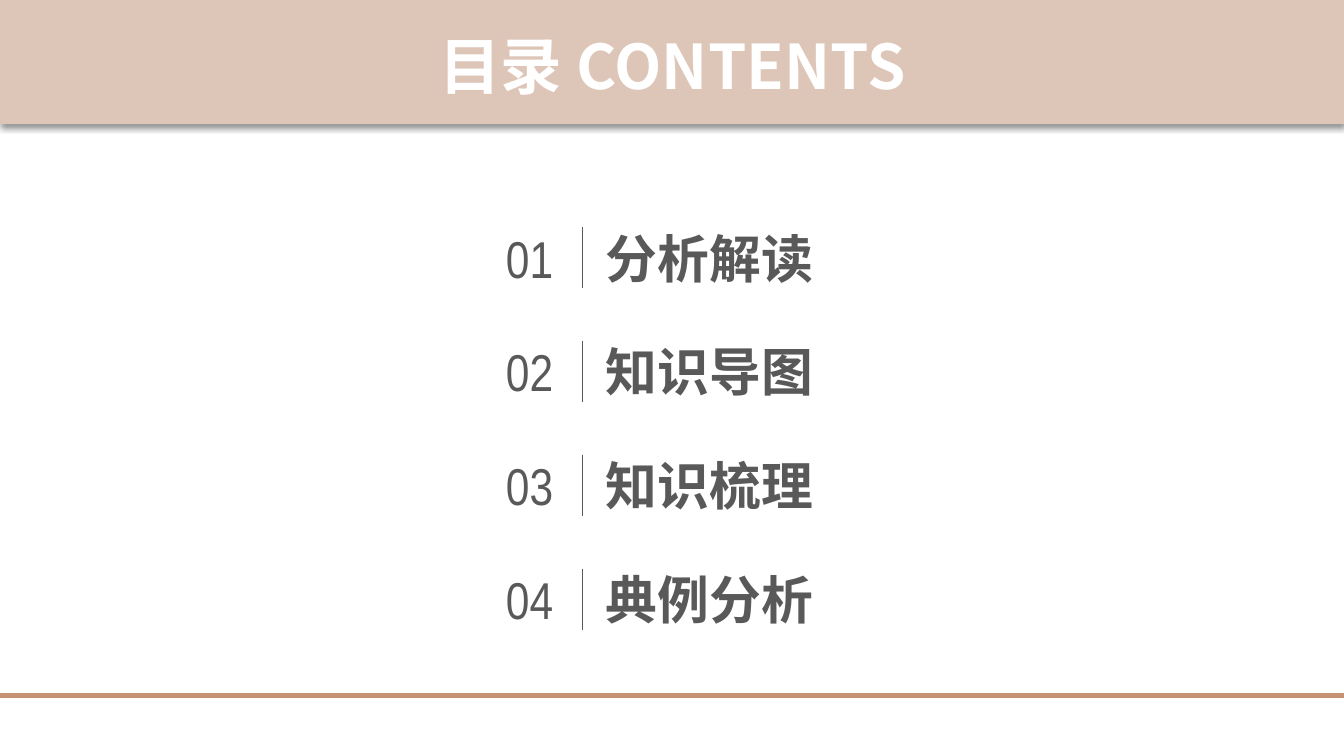
import pptx
import pptx.dml.color
import pptx.enum.shapes
import pptx.enum.text
import pptx.oxml
import pptx.oxml.ns
import pptx.util
from lxml import etree

Pt = pptx.util.Pt
ALIGN = pptx.enum.text.PP_ALIGN
qn = pptx.oxml.ns.qn

COLORS = {"ink": "595959", "banner": "DDC5B7", "white": "FFFFFF", "rule": "C69274"}
LATIN = "Arial Narrow"
CJK = "Noto Sans CJK SC"
WIDTH, HEIGHT = 960, 540
TOPICS = ["分析解读", "知识导图", "知识梳理", "典例分析"]
FIRST_TOP, ROW_PITCH = 156.6, 81.4

SHADOW = (
    f'<a:effectLst {pptx.oxml.ns.nsdecls("a")}>'
    '<a:outerShdw blurRad="50800" dist="38100" dir="5400000" algn="t" rotWithShape="0">'
    '<a:srgbClr val="000000"><a:alpha val="40000"/></a:srgbClr>'
    "</a:outerShdw></a:effectLst>"
)


class Deck:
    def __init__(self):
        self.prs = pptx.Presentation()
        self.prs.slide_width, self.prs.slide_height = Pt(WIDTH), Pt(HEIGHT)
        self.s = self.prs.slides.add_slide(self.prs.slide_layouts[6])

    def color(self, name):
        return pptx.dml.color.RGBColor.from_string(COLORS[name])

    def text(self, box, words, size, font, color, bold=False, align=ALIGN.LEFT,
             insets=(9.4, 5), wrap=True):
        sp = self.s.shapes.add_textbox(*map(Pt, box))
        tf = sp.text_frame
        tf.word_wrap = wrap
        tf.auto_size = pptx.enum.text.MSO_AUTO_SIZE.SHAPE_TO_FIT_TEXT
        tf.margin_left = tf.margin_right = Pt(insets[0])
        tf.margin_top = tf.margin_bottom = Pt(insets[1])
        p = tf.paragraphs[0]
        p.alignment = align
        p.font.size, p.font.bold, p.font.name = Pt(size), bold, font
        p.font.color.rgb = self.color(color)
        r = p.add_run()
        r.text = words
        # East Asian glyphs take their typeface from a:ea
        etree.SubElement(r._r.get_or_add_rPr(), qn("a:ea")).set("typeface", font)

    def line(self, start, end, color, width):
        c = self.s.shapes.add_connector(
            pptx.enum.shapes.MSO_CONNECTOR.STRAIGHT, *map(Pt, start + end))
        c.line.color.rgb = self.color(color)
        c.line.width = Pt(width)
        etree.SubElement(c._element.spPr, qn("a:effectLst"))

    def banner(self, box, color):
        """Add a borderless rectangle with a soft shadow below it."""
        sp = self.s.shapes.add_shape(
            pptx.enum.shapes.MSO_SHAPE.RECTANGLE, *map(Pt, box))
        sp.fill.solid()
        sp.fill.fore_color.rgb = self.color(color)
        sp.line.fill.background()
        sp._element.spPr.append(pptx.oxml.parse_xml(SHADOW))


def main():
    deck = Deck()
    for i, topic in enumerate(TOPICS):
        top = FIRST_TOP + i * ROW_PITCH
        deck.text((347, top, 62.6, 54.5), f"{i + 1:02}", 37, LATIN, "ink",
                  align=ALIGN.CENTER)
        deck.line((416.2, top + 5.4), (416.2, top + 49.4), "ink", 0.75)
        deck.text((423.4, top, 264, 54), topic, 37, CJK, "ink", bold=True)

    deck.banner((0, 0, WIDTH, 88.6), "banner")
    deck.text((297.4, 16.6, 365.8, 60.5), "目录 CONTENTS", 44, CJK, "white",
              bold=True, align=ALIGN.CENTER, insets=(0, 3.6), wrap=False)
    deck.line((0, 496.8), (WIDTH, 496.8), "rule", 3)
    deck.prs.save("out.pptx")


if __name__ == "__main__":
    main()
